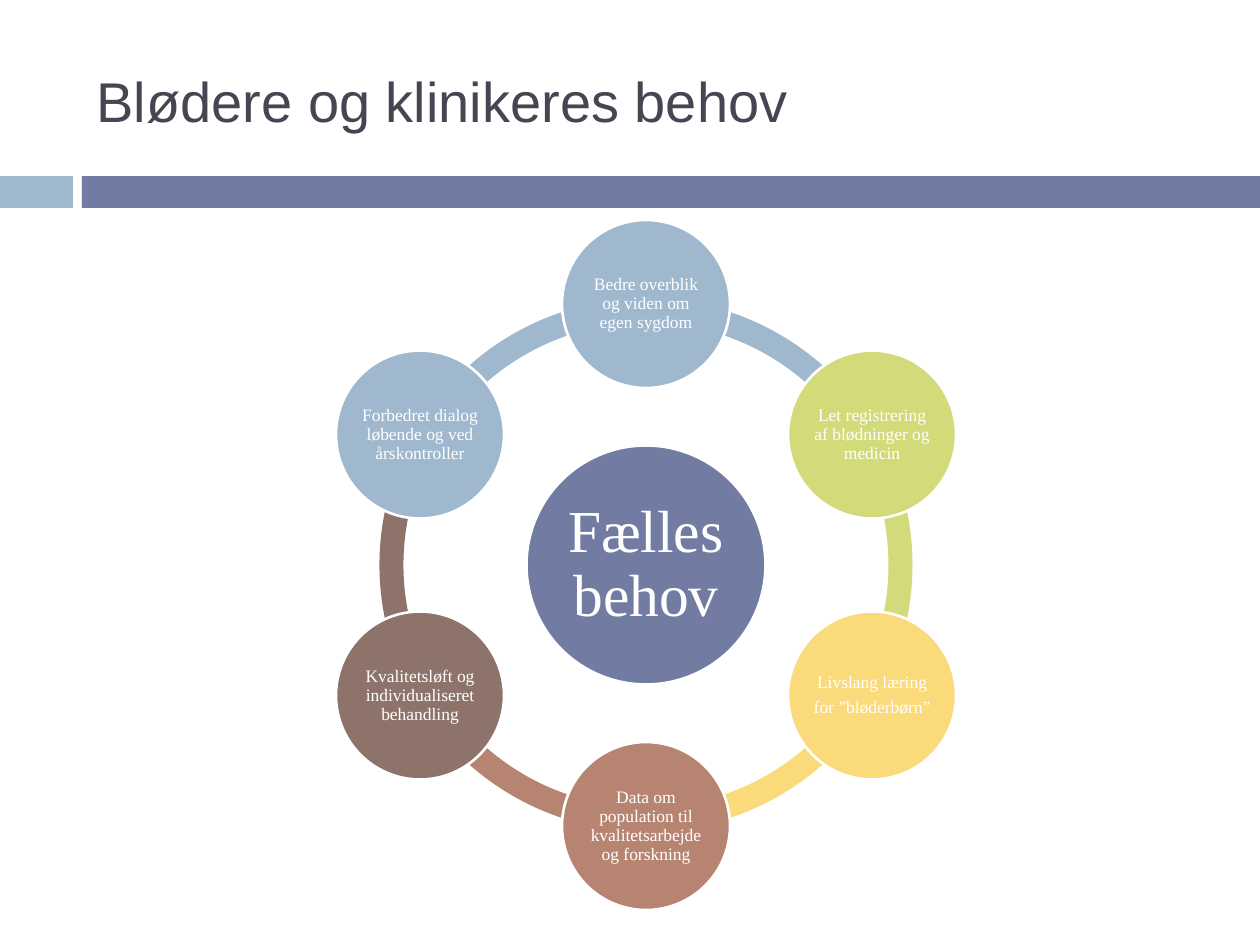
"""Build a slide with six shared needs on a ring around a hub."""
from math import cos, radians, sin

from pptx import Presentation
from pptx.dml.color import RGBColor as Rgb
from pptx.enum.shapes import MSO_SHAPE as Kind
from pptx.enum.text import MSO_ANCHOR as Anchor, PP_ALIGN as Align
from pptx.util import Emu, Pt

PX = 914400 / 126
WHITE = Rgb(0xFF, 0xFF, 0xFF)
INK = Rgb(0x46, 0x46, 0x53)
INDIGO = Rgb(0x72, 0x7C, 0xA3)
BLUE = Rgb(0x9F, 0xB8, 0xCD)
LIME = Rgb(0xD2, 0xDA, 0x7A)
GOLD = Rgb(0xFA, 0xDA, 0x7A)
CLAY = Rgb(0xB8, 0x84, 0x72)
BROWN = Rgb(0x8E, 0x73, 0x6A)

MID_X, MID_Y = 646, 565
ORBIT, RING, HUB, NODE = 261, 533, 239, 168
NEEDS = [
    ("Bedre overblik og viden om egen sygdom", BLUE),
    ("Let registrering af blødninger og medicin", LIME),
    ("Livslang læring\nfor ”bløderbørn”", GOLD),
    ("Data om population til kvalitetsarbejde og forskning", CLAY),
    ("Kvalitetsløft og individualiseret behandling", BROWN),
    ("Forbedret dialog løbende og ved årskontroller", BLUE),
]


def emu(*sizes):
    return [Emu(round(size * PX)) for size in sizes]


class Deck:
    """Hold the style and the current slide."""

    head, body = "Arial", "Times New Roman"

    def __init__(self):
        self.prs = Presentation()
        self.prs.slide_width, self.prs.slide_height = emu(1260, 945)
        self.slide = self.prs.slides.add_slide(self.prs.slide_layouts[5])

    def title(self, text, x, y, w, h):
        box = self.slide.shapes.title
        box.left, box.top, box.width, box.height = emu(x, y, w, h)
        frame = box.text_frame
        frame.text = text
        frame.vertical_anchor = Anchor.MIDDLE
        para = frame.paragraphs[0]
        para.alignment = Align.LEFT
        self.font(para, self.head, 32, INK)

    def font(self, para, name, size, color):
        font = para.font
        font.name, font.size = name, Pt(size)
        font.color.rgb = color

    def shape(self, kind, x, y, w, h, color):
        item = self.slide.shapes.add_shape(kind, *emu(x, y, w, h))
        item.shadow.inherit = False
        item.fill.solid()
        item.fill.fore_color.rgb = color
        item.line.fill.background()
        return item

    def bar(self, x, w, color):
        self.shape(Kind.RECTANGLE, x, 176, w, 32, color)

    def arc(self, start, color):
        item = self.shape(Kind.BLOCK_ARC, MID_X - RING / 2, MID_Y - RING / 2,
                          RING, RING, color)
        ends = start % 360 * 0.6, (start + 60) % 360 * 0.6
        for i, value in enumerate((*ends, 0.045)):
            item.adjustments[i] = value

    def disc(self, text, x, y, size, color, points, inset):
        item = self.shape(Kind.OVAL, x - size / 2, y - size / 2, size, size, color)
        item.line.color.rgb = WHITE
        item.line.width = Pt(1.5)
        frame = item.text_frame
        frame.text = text
        frame.word_wrap = True
        frame.vertical_anchor = Anchor.MIDDLE
        (frame.margin_left, frame.margin_top,
         frame.margin_right, frame.margin_bottom) = emu(*[inset] * 4)
        for para in frame.paragraphs:
            para.alignment = Align.CENTER
            para.line_spacing = 0.9
            para.space_after = Pt(points * 0.35)
            self.font(para, self.body, points, WHITE)


def main():
    deck = Deck()
    deck.bar(0, 73, BLUE)
    deck.bar(82, 1178, INDIGO)
    deck.title("Blødere og klinikeres behov", 84, 32, 1124, 136)
    for i, (_, color) in enumerate(NEEDS):
        deck.arc(270 + 60 * i, color)
    deck.disc("Fælles behov", MID_X, MID_Y, HUB, INDIGO, 34, 6)
    for i, (text, color) in enumerate(NEEDS):
        turn = radians(60 * i - 90)
        deck.disc(text, MID_X + ORBIT * cos(turn), MID_Y + ORBIT * sin(turn),
                  NODE, color, 10, 1)
    deck.prs.save("out.pptx")


if __name__ == "__main__":
    main()
